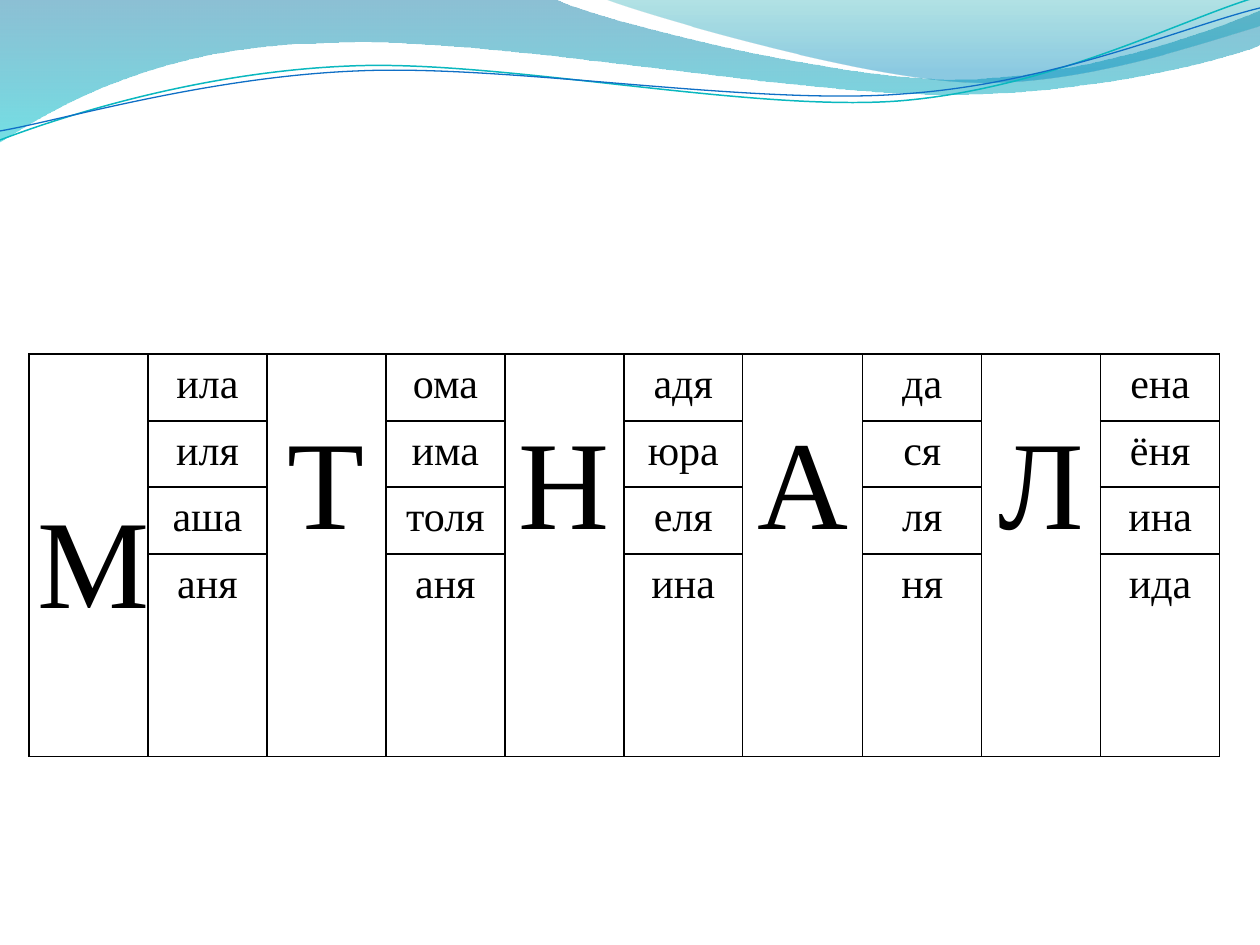
"""Build a slide with a table of initials and name endings under a wave banner."""
from lxml import etree
from pptx import Presentation
from pptx.dml.color import RGBColor
from pptx.enum.text import MSO_ANCHOR, PP_ALIGN
from pptx.oxml.ns import qn
from pptx.util import Pt

PX = 914400 / 126
CENTER = PP_ALIGN.CENTER
TOP, MIDDLE = MSO_ANCHOR.TOP, MSO_ANCHOR.MIDDLE
BLACK = RGBColor(0, 0, 0)
NAVY = RGBColor(0x00, 0x74, 0xA1)
AQUA = RGBColor(0x00, 0xC6, 0xCF)
TEAL = RGBColor(0x00, 0xA1, 0xA9)
SKY = RGBColor(0x00, 0x8B, 0xBF)
MINT = RGBColor(0x0A, 0xB8, 0xBF)
BLUE = RGBColor(0x0F, 0x6F, 0xC6)


def px(num):
    return round(num * PX)


def curve(start, parts, close):
    pen = slide.shapes.build_freeform(*start, scale=PX)
    pen.add_line_segments([spot for part in parts for spot in part], close=close)
    shape = pen.convert_to_shape()
    shape.shadow.inherit = False
    steps = iter(list(shape.element.iter(qn("a:lnTo"))))
    for part in parts:
        group = [next(steps) for _ in part]
        if len(group) == 3:
            bend = etree.Element(qn("a:cubicBezTo"))
            group[0].addprevious(bend)
            for step in group:
                bend.append(step[0])
                step.getparent().remove(step)
    return shape


prs = Presentation()
prs.slide_width, prs.slide_height = px(1260), px(945)
slide = prs.slides.add_slide(prs.slide_layouts[6])

waves = [
    ((0, 0), [
        [(554, -1)],
        [(600, 21), (837, 79), (955, 79)],
        [(1075, 79), (1207, 33), (1260, 11)],
        [(1261, 45)],
        [(1239, 55), (1096, 96), (940, 94)],
        [(784, 94), (481, 35), (324, 43)],
        [(163, 45), (58, 105), (-1, 142)],
    ], [(NAVY, 0, 45), (AQUA, 1, 55)]),
    ((604, -1), [
        [(641, 14), (859, 78), (969, 82)],
        [(1079, 87), (1211, 40), (1260, 26)],
        [(1260, 0)],
    ], [(TEAL, 0, 30), (SKY, 0.8, 45)]),
]
for start, parts, stops in waves:
    wave = curve(start, parts, True)
    wave.line.fill.background()
    wave.fill.gradient()
    wave.fill.gradient_angle = 270
    for stop, (color, place, _) in zip(wave.fill.gradient_stops, stops):
        stop.color.rgb = color
        stop.position = place
    tones = wave.element.spPr.iter(qn("a:srgbClr"))
    for tone, (_, _, alpha) in zip(tones, stops):
        etree.SubElement(tone, qn("a:alpha"), val=str(alpha * 1000))

lines = [
    ((0, 140), [
        [(60, 117), (199, 72), (349, 66)],
        [(498, 59), (747, 112), (898, 101)],
        [(1050, 89), (1182, 19), (1257, -3)],
    ], MINT, 0.85),
    ((0, 131), [
        [(59, 121), (207, 77), (357, 71)],
        [(508, 64), (752, 106), (903, 94)],
        [(1053, 84), (1186, 26), (1260, 8)],
    ], BLUE, 0.75),
]
for start, parts, color, width in lines:
    line = curve(start, parts, False)
    line.fill.background()
    line.line.color.rgb = color
    line.line.width = Pt(width)

names = [
    ("М", ["ила", "иля", "аша", "аня"]),
    ("Т", ["ома", "има", "толя", "аня"]),
    ("Н", ["адя", "юра", "еля", "ина"]),
    ("А", ["да", "ся", "ля", "ня"]),
    ("Л", ["ена", "ёня", "ина", "ида"]),
]
table = slide.shapes.add_table(
    4, 10, px(29), px(354), px(1191), px(266)).table
table.first_row = table.horz_banding = False
for spot, col in enumerate(table.columns):
    col.width = px(120 if spot == 6 else 119)
for row, high in zip(table.rows, [67, 66, 67, 66]):
    row.height = px(high)

for cell in table.iter_cells():
    props = cell._tc.get_or_add_tcPr()
    for side in ("a:lnL", "a:lnR", "a:lnT", "a:lnB"):
        edge = etree.SubElement(props, qn(side), w=str(Pt(1)))
        fill = etree.SubElement(edge, qn("a:solidFill"))
        etree.SubElement(fill, qn("a:srgbClr"), val=str(BLACK))
    cell.fill.background()

items = []
for pair, (big, ends) in enumerate(names):
    head = table.cell(0, 2 * pair)
    head.merge(table.cell(3, 2 * pair))
    anchor, gap = (TOP, 42) if pair else (MIDDLE, 0)
    items.append((head, big, 72, anchor, gap))
    for row, end in enumerate(ends):
        items.append((table.cell(row, 2 * pair + 1), end, 24, TOP, 0))

for cell, text, size, anchor, gap in items:
    form = {"text": text, "vertical_anchor": anchor, "margin_left": px(9),
            "margin_right": px(9), "margin_top": px(gap), "margin_bottom": 0}
    for key, value in form.items():
        setattr(cell, key, value)
    para = cell.text_frame.paragraphs[0]
    para.alignment = CENTER
    para.line_spacing = 1.15
    font = para.runs[0].font
    font.name, font.size = "Times New Roman", Pt(size)
    font.color.rgb = BLACK

prs.save("out.pptx")
